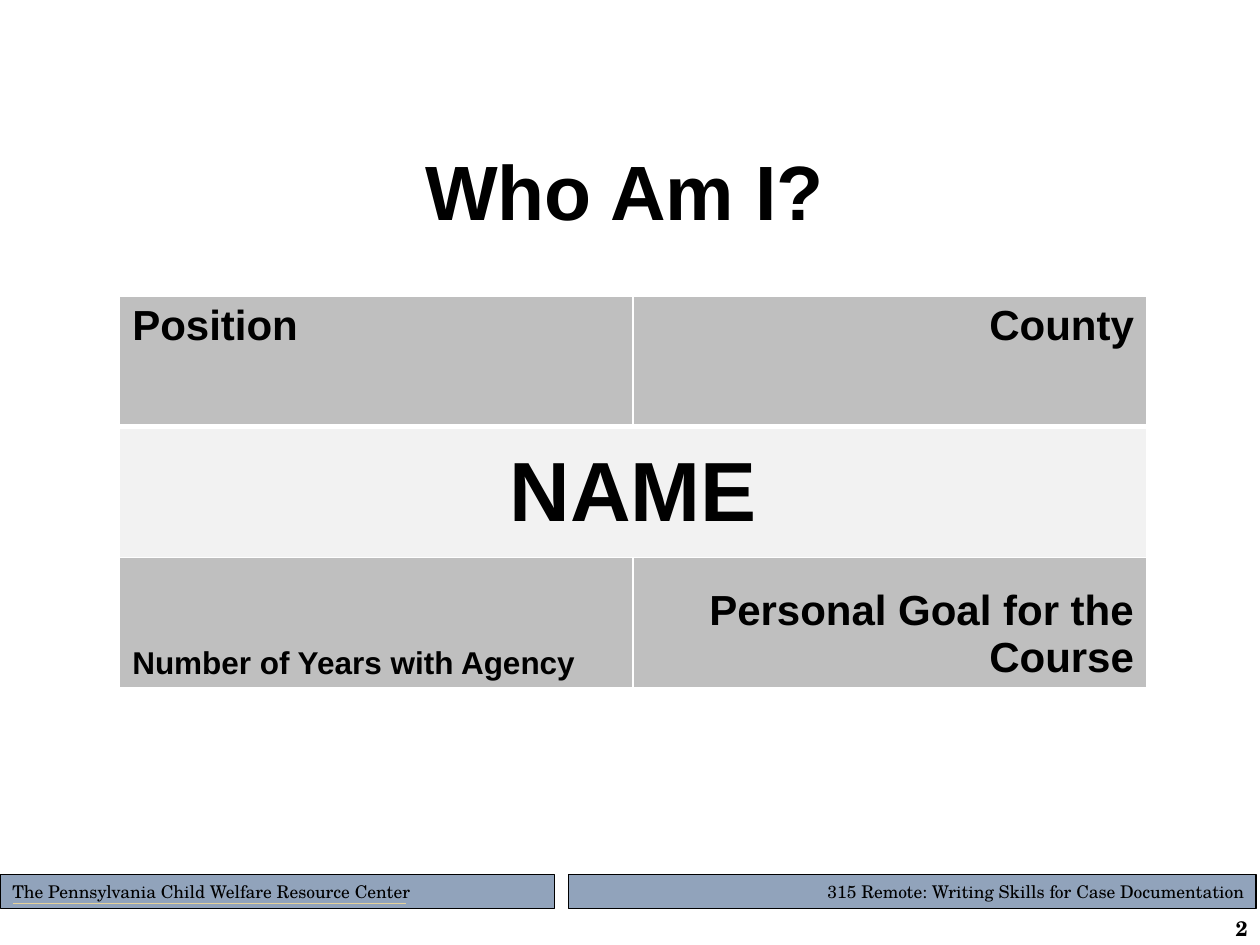
import pptx
import pptx.util
import pptx.dml.color
import pptx.enum.shapes
import pptx.enum.text
from lxml import etree
from pptx.oxml.ns import qn

Inches = pptx.util.Inches
Pt = pptx.util.Pt
ALIGN = pptx.enum.text.PP_ALIGN
ANCHOR = pptx.enum.text.MSO_ANCHOR

COLORS = {
    "text": "000000",
    "footer": "91A3BB",
    "rule": "E5D199",
    "outer_row": "BFBFBF",
    "name_row": "F2F2F2",
    "border": "FFFFFF",
}
HEADING_FONT = "Arial"
FOOTER_FONT = "TeX Gyre Schola"


def rgb(name):
    return pptx.dml.color.RGBColor.from_string(COLORS[name])


def write(frame, text, size, font, bold=False, align=ALIGN.LEFT):
    frame.word_wrap = True
    paragraph = frame.paragraphs[0]
    paragraph.text = text
    paragraph.alignment = align
    paragraph.font.size = Pt(size)
    paragraph.font.name = font
    paragraph.font.bold = bold
    paragraph.font.color.rgb = rgb("text")


def add_footer_bar(slide, left, width, text, line_width, align):
    bar = slide.shapes.add_shape(
        pptx.enum.shapes.MSO_SHAPE.RECTANGLE,
        Inches(left), Inches(6.94), Inches(width), Inches(0.27))
    bar.shadow.inherit = False
    bar.fill.solid()
    bar.fill.fore_color.rgb = rgb("footer")
    bar.line.color.rgb = rgb("text")
    bar.line.width = Pt(line_width)
    bar.text_frame.vertical_anchor = ANCHOR.TOP
    write(bar.text_frame, text, 10, FOOTER_FONT, align=align)


def add_footer_rule(slide):
    rule = slide.shapes.add_connector(
        pptx.enum.shapes.MSO_CONNECTOR.STRAIGHT,
        Inches(0.1), Inches(7.17), Inches(3.22), Inches(7.17))
    rule.line.color.rgb = rgb("rule")
    rule.line.width = Pt(0.75)
    etree.SubElement(rule._element.spPr, qn("a:effectLst"))


def add_label(slide, box, text, size, font, align, anchor=ANCHOR.TOP):
    label = slide.shapes.add_textbox(*map(Inches, box))
    label.text_frame.vertical_anchor = anchor
    write(label.text_frame, text, size, font, True, align)


def set_borders(cell, top, bottom):
    """Draw the four cell borders; top and bottom widths are in points."""
    properties = cell._tc.get_or_add_tcPr()
    for side, width in (("L", 1), ("R", 1), ("T", top), ("B", bottom)):
        line = etree.SubElement(properties, qn(f"a:ln{side}"), w=str(Pt(width)))
        fill = etree.SubElement(line, qn("a:solidFill"))
        etree.SubElement(fill, qn("a:srgbClr"), val=COLORS["border"])


def add_introduction_table(slide):
    rows = [
        [("Position", 24, ALIGN.LEFT), ("County", 24, ALIGN.RIGHT)],
        [("NAME", 48, ALIGN.CENTER)],
        [("Number of Years with Agency", 18, ALIGN.LEFT),
         ("Personal Goal for the Course", 24, ALIGN.RIGHT)],
    ]
    anchors = [ANCHOR.TOP, ANCHOR.MIDDLE, ANCHOR.BOTTOM]
    fills = ["outer_row", "name_row", "outer_row"]
    border_widths = [1, 3, 1, 1]

    table = slide.shapes.add_table(
        3, 2, Inches(0.95), Inches(2.35), Inches(8.15), Inches(3.11)).table
    for row_index, prompts in enumerate(rows):
        for column in range(2):
            cell = table.cell(row_index, column)
            set_borders(cell, *border_widths[row_index:row_index + 2])
            cell.fill.solid()
            cell.fill.fore_color.rgb = rgb(fills[row_index])
            cell.vertical_anchor = anchors[row_index]
        for column, (text, size, align) in enumerate(prompts):
            write(table.cell(row_index, column).text_frame, text, size,
                  HEADING_FONT, True, align)
    table.cell(1, 0).merge(table.cell(1, 1))


def main():
    presentation = pptx.Presentation()
    presentation.slide_width = Inches(10)
    presentation.slide_height = Inches(7.5)
    slide = presentation.slides.add_slide(presentation.slide_layouts[6])

    add_footer_bar(slide, 4.51, 5.46,
                   "315 Remote: Writing Skills for Case Documentation",
                   0.75, ALIGN.RIGHT)
    add_footer_bar(slide, 0, 4.4,
                   "The Pennsylvania Child Welfare Resource Center",
                   0.5, ALIGN.LEFT)
    add_footer_rule(slide)
    add_label(slide, (0.46, 0.92, 9, 1), "Who Am I?", 44, HEADING_FONT,
              ALIGN.CENTER, ANCHOR.BOTTOM)
    add_introduction_table(slide)
    add_label(slide, (8.89, 7.22, 1.11, 0.26), "2", 12, FOOTER_FONT,
              ALIGN.RIGHT)

    presentation.save("out.pptx")


if __name__ == "__main__":
    main()
